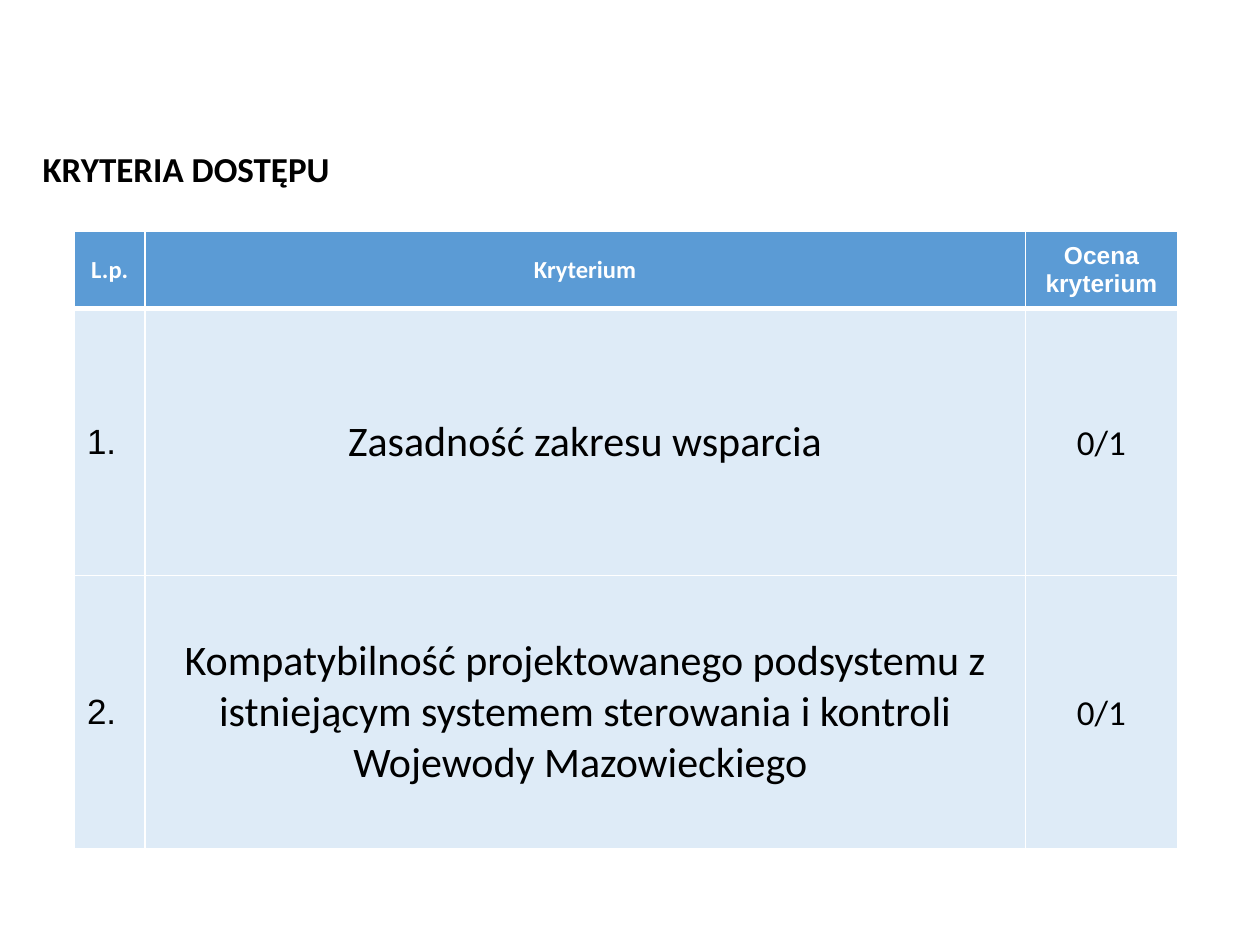
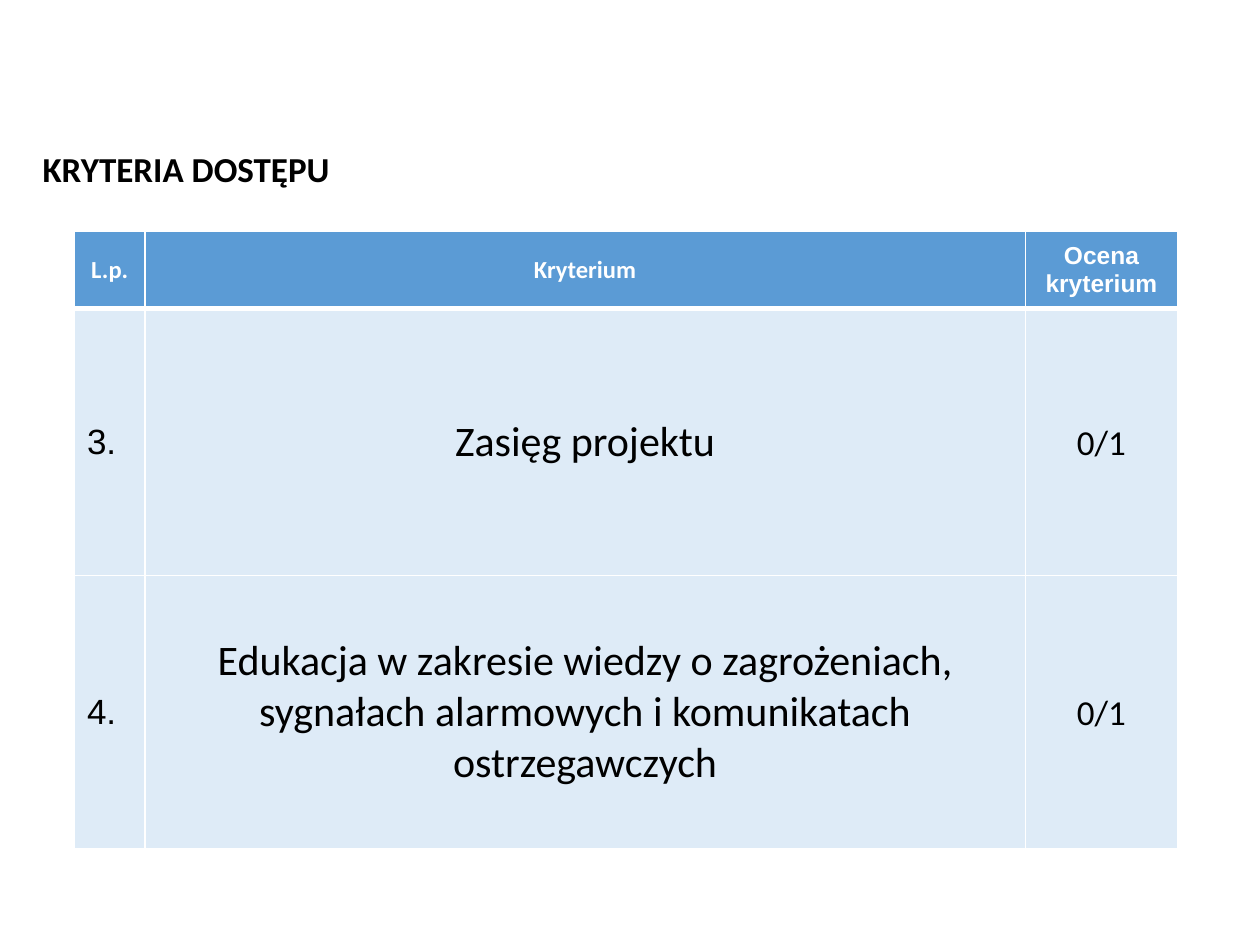
from dataclasses import dataclass

import pptx
import pptx.dml.color
import pptx.enum.text
import pptx.oxml
import pptx.oxml.ns
import pptx.util

Cm = pptx.util.Cm
Align = pptx.enum.text.PP_ALIGN
Anchor = pptx.enum.text.MSO_ANCHOR


@dataclass(frozen=True)
class Theme:
    ink: str = "000000"
    paper: str = "FFFFFF"
    header_fill: str = "5B9BD5"
    row_fill: str = "DEEBF7"
    body_font: str = "Calibri"
    number_font: str = "Arial"
    header_size: int = 14
    base_size: int = 20
    criterion_size: int = 24
    thin_rule: int = 1
    header_rule: int = 3


@dataclass(frozen=True)
class Box:
    left: float
    top: float
    width: float
    height: float

    def lengths(self):
        return Cm(self.left), Cm(self.top), Cm(self.width), Cm(self.height)


THEME = Theme()
HEADING_BOX = Box(0.61, 2.84, 9.4, 1.12)
TABLE_BOX = Box(1.5, 4.67, 22.24, 12.44)
NUMBER_WIDTH = 1.42
SCORE_WIDTH = 3.07
HEADER_HEIGHT = 1.55
FIRST_ROW_HEIGHT = 5.38
SCORE_INSET = 0.1

HEADING = "KRYTERIA DOSTĘPU"
COLUMN_TITLES = ("L.p.", "Kryterium", "Ocena kryterium")
SCORE = "0/1"
CRITERIA_BY_SLIDE = (
    (
        ("1.", "Zasadność zakresu wsparcia"),
        ("2.", "Kompatybilność projektowanego podsystemu z istniejącym "
               "systemem sterowania i kontroli Wojewody Mazowieckiego "),
    ),
    (
        ("3.", "Zasięg projektu"),
        ("4.", "Edukacja w zakresie wiedzy o zagrożeniach, sygnałach "
               "alarmowych i komunikatach ostrzegawczych"),
    ),
)


def rgb(color):
    return pptx.dml.color.RGBColor.from_string(color)


def write(frame, text, size=THEME.base_size, font=THEME.body_font,
          color=THEME.ink, bold=False, align=Align.LEFT, spacing=None):
    frame.word_wrap = True
    paragraph = frame.paragraphs[0]
    paragraph.alignment = align
    paragraph.line_spacing = spacing
    run = paragraph.add_run()
    run.text = text
    run.font.size = pptx.util.Pt(size)
    run.font.name = font
    run.font.bold = bold
    run.font.color.rgb = rgb(color)


def rule_cell(cell, top, bottom):
    properties = cell._tc.get_or_add_tcPr()
    widths = {"lnL": THEME.thin_rule, "lnR": THEME.thin_rule, "lnT": top, "lnB": bottom}
    for position, (side, width) in enumerate(widths.items()):
        properties.insert(position, pptx.oxml.parse_xml(
            f'<a:{side} {pptx.oxml.ns.nsdecls("a")} w="{pptx.util.Pt(width)}">'
            f'<a:solidFill><a:srgbClr val="{THEME.paper}"/></a:solidFill></a:{side}>'))


def style_cell(cell, fill, top=THEME.thin_rule, bottom=THEME.thin_rule):
    cell.fill.solid()
    cell.fill.fore_color.rgb = rgb(fill)
    cell.vertical_anchor = Anchor.MIDDLE
    rule_cell(cell, top, bottom)


def add_heading(slide, box, text):
    frame = slide.shapes.add_textbox(*box.lengths()).text_frame
    frame.vertical_anchor = Anchor.MIDDLE
    write(frame, text, bold=True)


def fill_header(cells):
    fonts = (THEME.body_font, THEME.body_font, THEME.number_font)
    for cell, title, font in zip(cells, COLUMN_TITLES, fonts):
        style_cell(cell, THEME.header_fill, bottom=THEME.header_rule)
        write(cell.text_frame, title, size=THEME.header_size, font=font,
              color=THEME.paper, bold=True, align=Align.CENTER)


def fill_criterion(cells, number, criterion, top):
    for cell in cells:
        style_cell(cell, THEME.row_fill, top=top)
    number_cell, criterion_cell, score_cell = cells
    write(number_cell.text_frame, number, font=THEME.number_font)
    write(criterion_cell.text_frame, criterion, size=THEME.criterion_size,
          align=Align.CENTER)
    score_cell.margin_left = score_cell.margin_right = Cm(SCORE_INSET)
    score_cell.margin_top = score_cell.margin_bottom = Cm(SCORE_INSET)
    write(score_cell.text_frame, SCORE, align=Align.CENTER, spacing=1.07)


def add_criteria_table(slide, box, criteria):
    table = slide.shapes.add_table(
        len(criteria) + 1, len(COLUMN_TITLES), *box.lengths()).table
    table.horz_banding = False
    widths = (NUMBER_WIDTH, box.width - NUMBER_WIDTH - SCORE_WIDTH, SCORE_WIDTH)
    for column, width in zip(table.columns, widths):
        column.width = Cm(width)
    heights = (HEADER_HEIGHT, FIRST_ROW_HEIGHT,
               box.height - HEADER_HEIGHT - FIRST_ROW_HEIGHT)
    for row, height in zip(table.rows, heights):
        row.height = Cm(height)
    header, *body = [list(row.cells) for row in table.rows]
    fill_header(header)
    top = THEME.header_rule
    for cells, (number, criterion) in zip(body, criteria):
        fill_criterion(cells, number, criterion, top)
        top = THEME.thin_rule


def add_criteria_slide(deck, criteria):
    slide = deck.slides.add_slide(deck.slide_layouts[6])
    slide.background.fill.solid()
    slide.background.fill.fore_color.rgb = rgb(THEME.paper)
    add_criteria_table(slide, TABLE_BOX, criteria)
    add_heading(slide, HEADING_BOX, HEADING)


def main():
    deck = pptx.Presentation()
    deck.slide_width, deck.slide_height = Cm(25.4), Cm(19.05)
    for criteria in CRITERIA_BY_SLIDE:
        add_criteria_slide(deck, criteria)
    deck.save("out.pptx")


if __name__ == "__main__":
    main()
